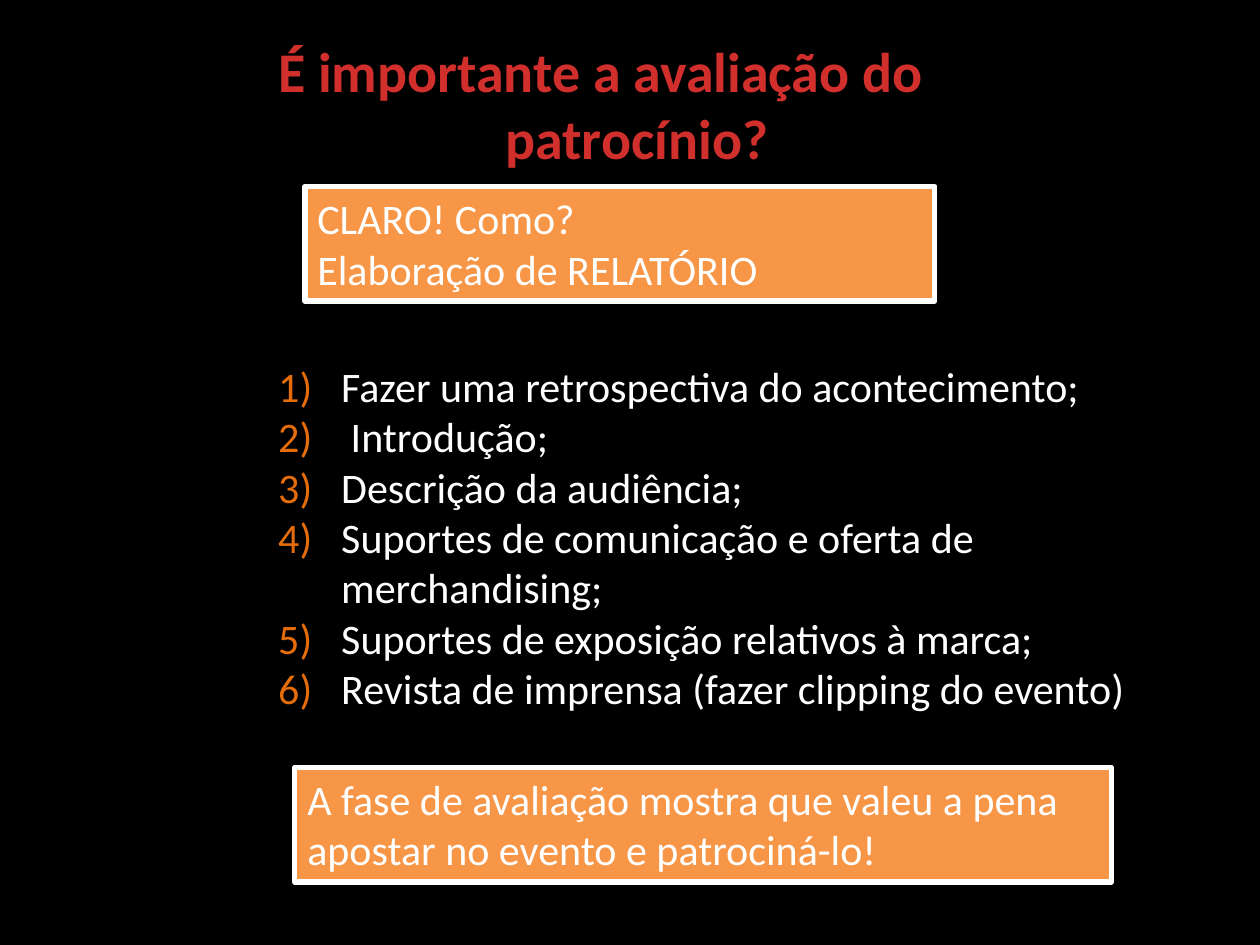
from lxml.etree import SubElement
from pptx import Presentation
from pptx.dml.color import RGBColor
from pptx.enum.shapes import MSO_SHAPE
from pptx.enum.text import MSO_ANCHOR, PP_ALIGN
from pptx.oxml.ns import qn
from pptx.util import Inches, Pt

COLORS = {
    "background": "000000",
    "title": "D02F2C",
    "text": "FFFFFF",
    "box": "F79646",
    "number": "E46C0A",
}
REPORT_LINES = ["CLARO! Como?", "Elaboração de RELATÓRIO"]
REPORT_CONTENTS = [
    "Fazer uma retrospectiva do acontecimento;",
    " Introdução;",
    "Descrição da audiência;",
    "Suportes de comunicação e oferta de merchandising;",
    "Suportes de exposição relativos à marca;",
    "Revista de imprensa (fazer clipping do evento)",
]
CONCLUSION_LINES = [
    "A fase de avaliação mostra que valeu a pena",
    "apostar no evento e patrociná-lo!",
]


def color(name):
    """Return the named colour."""
    return RGBColor.from_string(COLORS[name])


def set_indent(paragraph, left, first_line=0):
    """Set the left margin and first-line indent and return the properties."""
    properties = paragraph._p.get_or_add_pPr()
    properties.set("marL", str(Inches(left)))
    properties.set("indent", str(Inches(first_line)))
    return properties


def number_paragraph(paragraph):
    """Give a paragraph a hanging, coloured automatic number."""
    properties = set_indent(paragraph, 0.5, -0.5)
    bullet_color = SubElement(properties, qn("a:buClr"))
    SubElement(bullet_color, qn("a:srgbClr"), val=COLORS["number"])
    SubElement(properties, qn("a:buFont"), typeface="+mj-lt")
    SubElement(properties, qn("a:buAutoNum"), type="arabicParenR")


def style_font(paragraph, size=24, color_name="text", bold=False):
    """Set the font of a whole paragraph."""
    font = paragraph.font
    font.name = "Calibri"
    font.size = Pt(size)
    font.bold = bold
    font.color.rgb = color(color_name)


def add_text_box(slide, lines, left, top, width, height):
    """Add a wrapping text box with one paragraph per line."""
    shape = slide.shapes.add_textbox(
        Inches(left), Inches(top), Inches(width), Inches(height))
    shape.text_frame.word_wrap = True
    shape.text_frame.text = "\n".join(lines)
    return shape.text_frame


def add_title(slide):
    """Add the two-line title."""
    frame = add_text_box(
        slide, ["É importante a avaliação do", "patrocínio?"],
        1.02, 0.31, 8.07, 1.02)
    frame.vertical_anchor = MSO_ANCHOR.MIDDLE
    opening, ending = frame.paragraphs
    set_indent(opening, 1.09)
    ending.alignment = PP_ALIGN.CENTER
    for paragraph in frame.paragraphs:
        style_font(paragraph, 32, "title", True)


def add_numbered_list(slide):
    """Add the numbered contents of the report."""
    frame = add_text_box(slide, REPORT_CONTENTS, 2.11, 2.81, 7.11, 2.93)
    for paragraph in frame.paragraphs:
        number_paragraph(paragraph)
        style_font(paragraph)


def add_callout(slide, lines, left, top, width):
    """Add an orange box with a white outline."""
    shape = slide.shapes.add_shape(
        MSO_SHAPE.RECTANGLE,
        Inches(left), Inches(top), Inches(width), Inches(0.91))
    shape.shadow.inherit = False
    shape.fill.solid()
    shape.fill.fore_color.rgb = color("box")
    shape.line.color.rgb = color("text")
    shape.line.width = Pt(3)
    frame = shape.text_frame
    frame.word_wrap = True
    frame.vertical_anchor = MSO_ANCHOR.TOP
    frame.text = "\n".join(lines)
    for paragraph in frame.paragraphs:
        paragraph.alignment = PP_ALIGN.LEFT
        style_font(paragraph)


def main():
    """Build and save the slide."""
    presentation = Presentation()
    presentation.slide_width = Inches(10)
    presentation.slide_height = Inches(7.5)
    slide = presentation.slides.add_slide(presentation.slide_layouts[6])
    slide.background.fill.solid()
    slide.background.fill.fore_color.rgb = color("background")
    add_title(slide)
    add_callout(slide, REPORT_LINES, 2.42, 1.48, 5)
    add_numbered_list(slide)
    add_callout(slide, CONCLUSION_LINES, 2.34, 6.09, 6.48)
    presentation.save("out.pptx")


if __name__ == "__main__":
    main()
